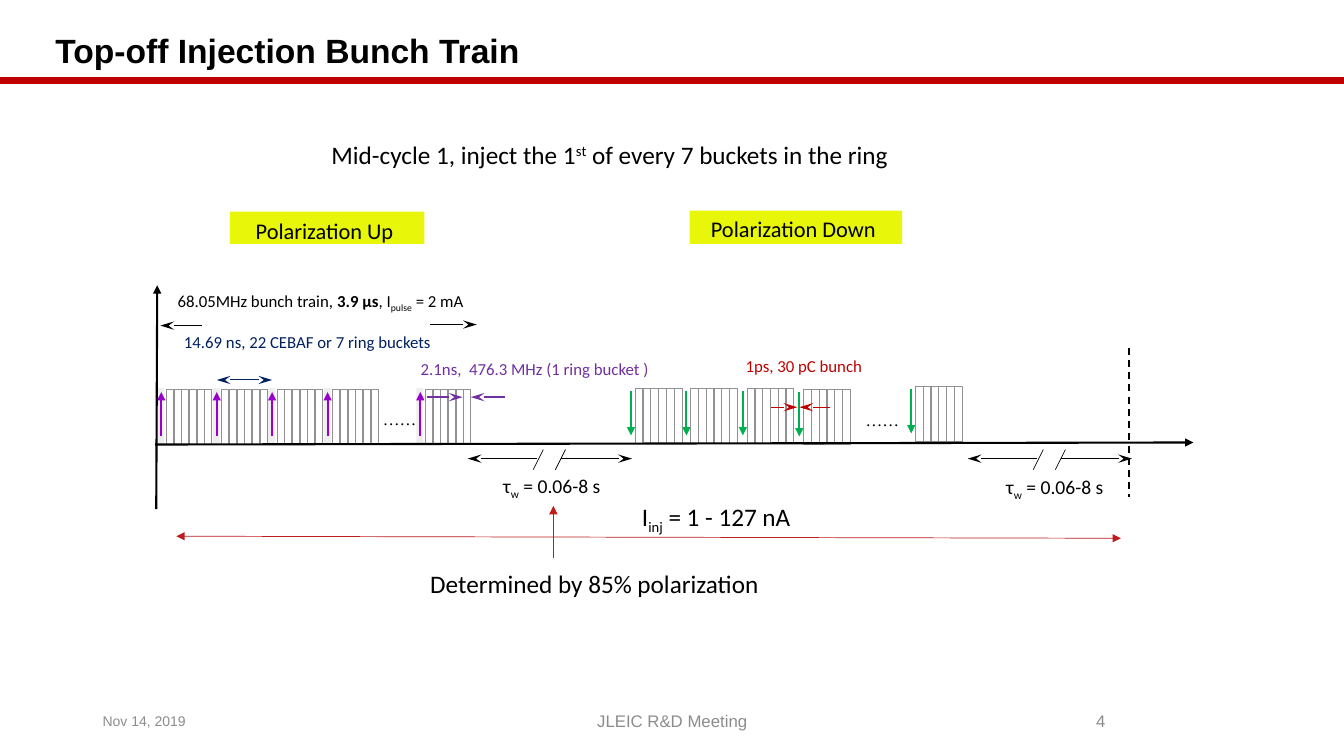
from dataclasses import dataclass

from lxml import etree
from pptx import Presentation
from pptx import util as u
from pptx.dml.color import RGBColor
from pptx.enum import dml, shapes, text
from pptx.oxml.ns import qn

BLACK = RGBColor(0x00, 0x00, 0x00)
RED = RGBColor(0xC0, 0x00, 0x00)
BRICK = RGBColor(0xBE, 0x1D, 0x1D)
NAVY = RGBColor(0x00, 0x20, 0x60)
PLUM = RGBColor(0x70, 0x30, 0xA0)
VIOLET = RGBColor(0x99, 0x00, 0xCC)
GREEN = RGBColor(0x00, 0xB0, 0x50)
YELLOW = RGBColor(0xE8, 0xF7, 0x0A)
PALE = RGBColor(0xEE, 0xEE, 0xEE)
GREY = RGBColor(0x91, 0x91, 0x91)
MUTED = RGBColor(0x8C, 0x8C, 0x8C)

LEFT, MID = text.PP_ALIGN.LEFT, text.PP_ALIGN.CENTER
TIMES = "Times New Roman"
CELLS = 6  # empty buckets after each filled one


def grid(n: float) -> u.Emu:
    """Ten grid columns or rows make one inch."""
    return u.Inches(n / 10)


@dataclass
class Run:
    words: str
    base: int = 0
    bold: bool = False


@dataclass
class Label:
    box: tuple
    runs: list
    size: float = 12
    color: RGBColor = BLACK
    font: str = "Calibri"
    align: int = MID
    middle: bool = False
    fill: RGBColor | None = None


@dataclass
class Line:
    start: tuple
    end: tuple
    color: RGBColor = BLACK
    width: float = 0.75
    head: str = ""
    tail: str = ""
    dash: bool = False


@dataclass
class Train:
    cols: list  # column of each injection arrow
    rows: list  # top row of each set of buckets
    color: RGBColor
    up: bool
    gap: float  # arrow to first bucket
    pitch: float
    cell: float


def write(frame, runs: list, *, size: float, color: RGBColor, font: str,
          align: int = LEFT, middle: bool = False, spacing: float = 1.0) -> None:
    frame.word_wrap = True
    frame.vertical_anchor = text.MSO_ANCHOR.MIDDLE if middle else text.MSO_ANCHOR.TOP
    par = frame.paragraphs[0]
    par.alignment, par.line_spacing = align, spacing
    for item in runs:
        run = par.add_run()
        run.text = item.words
        run.font.size, run.font.name = u.Pt(size), font
        run.font.bold, run.font.color.rgb = item.bold, color
        if item.base:
            run.font._element.set("baseline", str(item.base * 1000))


def rect(slide, box: tuple, fill: RGBColor | None = None, edge: RGBColor | None = None):
    shape = slide.shapes.add_shape(shapes.MSO_SHAPE.RECTANGLE, *map(grid, box))
    shape.shadow.inherit = False
    if fill is None:
        shape.fill.background()
    else:
        shape.fill.solid()
        shape.fill.fore_color.rgb = fill
    if edge is None:
        shape.line.fill.background()
    else:
        shape.line.color.rgb, shape.line.width = edge, u.Pt(0.5)
    return shape


def label(slide, item: Label) -> None:
    if item.fill is None:
        shape = slide.shapes.add_textbox(*map(grid, item.box))
    else:
        shape = rect(slide, item.box, item.fill)
    write(shape.text_frame, item.runs, size=item.size, color=item.color,
          font=item.font, align=item.align, middle=item.middle)


def draw(slide, item: Line) -> None:
    link = slide.shapes.add_connector(shapes.MSO_CONNECTOR.STRAIGHT,
                                      *map(grid, item.start + item.end))
    link.line.color.rgb, link.line.width = item.color, u.Pt(item.width)
    if item.dash:
        link.line.dash_style = dml.MSO_LINE.DASH
    props = link._element.spPr
    for tag, kind in (("a:headEnd", item.head), ("a:tailEnd", item.tail)):
        if kind:
            tip = etree.SubElement(props.find(qn("a:ln")), qn(tag), type=kind)
            tip.set("w", "med")
            tip.set("len", "lg" if kind == "stealth" else "med")
    etree.SubElement(props, qn("a:effectLst"))


def bunch(slide, train: Train) -> None:
    for col, row in zip(train.cols, train.rows):
        if train.up:
            rect(slide, (col - 0.4, row - 0.1, 0.7, 5.5), PALE)
        low, high = (col, row + 4.7), (col, row + 0.3)
        start, end = (low, high) if train.up else (high, low)
        draw(slide, Line(start, end, train.color, 1.5, tail="triangle"))
        for n in range(CELLS):
            left = col + train.gap + n * train.pitch
            rect(slide, (left, row, train.cell, 5.5), edge=GREY)


TRAINS = [
    Train([16, 21.5, 27, 32.5, 41.7], [38.6] * 5, VIOLET, True, 0.5, 0.76, 0.7),
    Train([62.6, 68.1, 73.7, 79.3, 90.4], [38.5, 38.5, 38.5, 38.6, 38.3],
          GREEN, False, 0.4, 0.77, 0.8),
]

LINES = [
    # Axes and end of cycle
    Line((15.4, 44.1), (118.4, 43.9), width=1.5, tail="triangle"),
    Line((15.5, 50.5), (15.6, 28.3), width=1.5, tail="triangle"),
    Line((112, 34.5), (112, 49.3), width=1.25, dash=True),
    # Bunch train length and spacing
    Line((42.7, 32.2), (47.3, 32.2), width=1, tail="stealth"),
    Line((20, 32.3), (15.9, 32.3), width=1, tail="stealth"),
    Line((21.5, 37.7), (27, 37.7), NAVY, head="stealth", tail="stealth"),
    # One ring bucket and bunch length
    Line((50.1, 39.4), (46.7, 39.4), PLUM, 1, tail="stealth"),
    Line((42.4, 39.4), (45.9, 39.4), PLUM, 1, tail="stealth"),
    Line((82.3, 40.4), (79.3, 40.4), RED, tail="stealth"),
    Line((76.5, 40.4), (79.1, 40.4), RED, tail="stealth"),
    # Injected current and its limit
    Line((54.9, 55.4), (54.9, 50.2), BRICK, 0.5, tail="triangle"),
    Line((17.5, 53.2), (111.2, 53.4), BRICK, 0.5, head="triangle", tail="triangle"),
]
# Waiting times, each broken by two slashes
for col in (46.4, 96):
    LINES += [Line((col, 45.5), (col + 6.9, 45.5), head="stealth"),
              Line((col + 9.3, 45.5), (col + 16.3, 45.5), tail="stealth")]
    LINES += [Line((col + step, 44.6), (col + step - 1, 46.6), width=0.5)
              for step in (7.5, 9.7)]

WAIT = [Run("τ"), Run("w", -25), Run(" = 0.06-8 s")]
LABELS = [
    Label((31.9, 13.3, 57.6, 4), [Run("Mid-cycle 1, inject the 1"), Run("st", 30),
          Run(" of every 7 buckets in the ring")], 18, align=LEFT),
    Label((22.8, 21, 19.3, 3.2), [Run("Polarization Up ")], 16, fill=YELLOW),
    Label((68.4, 20.9, 21.1, 3.3), [Run("Polarization Down ")], 16, fill=YELLOW),
    Label((16.1, 28.3, 31.4, 3.5), [Run("68.05MHz bunch train, "),
          Run("3.9 µs", bold=True), Run(", I"), Run("pulse", -25), Run(" = 2 mA")]),
    Label((14.9, 32.4, 31.2, 3.5), [Run("14.69 ns, 22 CEBAF or 7 ring buckets")],
          color=NAVY),
    Label((40.6, 35.1, 24.9, 3.5), [Run("2.1ns,  476.3 MHz (1 ring bucket )")],
          color=PLUM),
    Label((70.6, 34.8, 18.3, 2.9), [Run("1ps, 30 pC bunch")], color=RED),
    Label((36.4, 40.1, 6.5, 2.2), [Run("……")], font=TIMES),
    Label((84.3, 40.2, 6.5, 2.2), [Run("……")], font=TIMES),
    Label((45.8, 46.5, 17.9, 3.8), WAIT, 14),
    Label((96.3, 46.6, 16.7, 3.6), WAIT, 14),
    Label((62.7, 49.2, 20.9, 4), [Run("I"), Run("inj", -25), Run(" = 1 - 127 nA")],
          18, align=LEFT),
    Label((41.7, 55.9, 41.7, 4), [Run("Determined by 85% polarization")],
          18, align=LEFT),
    # Footer
    Label((9.2, 69.5, 30, 4), [Run("Nov 14, 2019")], 10, MUTED, "Arial", LEFT, True),
    Label((44.2, 69.5, 45, 4), [Run("JLEIC R&D Meeting")], 12, MUTED, "Arial",
          middle=True),
    Label((94.2, 69.5, 30, 4), [Run("4")], 12, MUTED, "Arial", middle=True),
]


def main() -> None:
    deck = Presentation()
    deck.slide_width, deck.slide_height = grid(133.33), grid(75)
    slide = deck.slides.add_slide(deck.slide_layouts[5])

    # Title and rule
    title = slide.shapes.title
    title.left, title.top, title.width, title.height = map(grid, (4.5, 2.6, 123.4, 5.3))
    write(title.text_frame, [Run("Top-off Injection Bunch Train", bold=True)], size=24,
          color=BLACK, font="Arial", middle=True, spacing=0.9)
    draw(slide, Line((0, 8), (133.33, 8), RED, 4.5))

    # Timing diagram
    for train in TRAINS:
        bunch(slide, train)
    for line in LINES:
        draw(slide, line)
    for item in LABELS:
        label(slide, item)
    deck.save("out.pptx")


if __name__ == "__main__":
    main()
